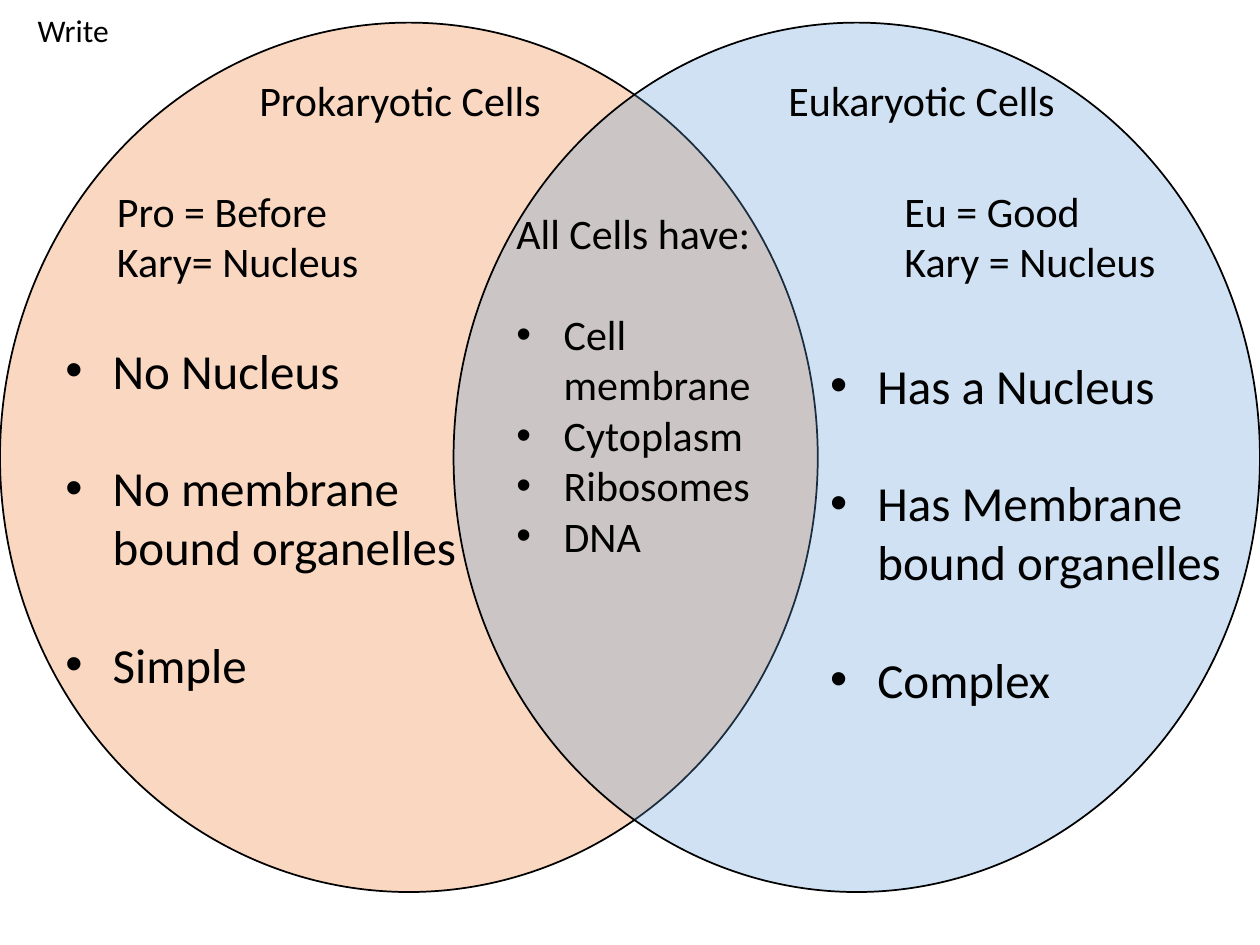
from lxml import etree
from pptx import Presentation, util as u
from pptx.dml.color import RGBColor
from pptx.enum import shapes, text
from pptx.oxml import ns

BLACK = RGBColor(0x00, 0x00, 0x00)
ORANGE = RGBColor(0xED, 0x7D, 0x31)
BLUE = RGBColor(0x5B, 0x9B, 0xD5)

deck = Presentation()
deck.slide_width, deck.slide_height = u.Inches(10), u.Inches(7.5)
slide = deck.slides.add_slide(deck.slide_layouts[6])
column, row = deck.slide_width / 100, deck.slide_height / 75


def on_grid(left, top, width, height):
    return (round(left * column), round(top * row),
            round(width * column), round(height * row))


def write(lines, place, size=24, bullets_from=None, gap=0, gap_after=()):
    """Lines from index bullets_from on get a bullet; those in gap_after get a gap in points."""
    frame = slide.shapes.add_textbox(*on_grid(*place)).text_frame
    frame.word_wrap = True
    frame.auto_size = text.MSO_AUTO_SIZE.SHAPE_TO_FIT_TEXT
    for index, line in enumerate(lines):
        paragraph = frame.paragraphs[0] if index == 0 else frame.add_paragraph()
        run = paragraph.add_run()
        run.text = line
        run.font.name, run.font.size = "Calibri", u.Pt(size)
        run.font.color.rgb = BLACK
        if index in gap_after:
            paragraph.space_after = u.Pt(gap)
        if bullets_from is not None and index >= bullets_from:
            properties = paragraph._p.get_or_add_pPr()
            indent = u.Inches(0.375)
            properties.set("marL", str(indent))
            properties.set("indent", str(-indent))
            etree.SubElement(properties, ns.qn("a:buFont"), typeface="Arial")
            etree.SubElement(properties, ns.qn("a:buChar"), char="•")


# Overlapping circles
for left, width, color, opacity in ((0, 64.9, ORANGE, 30), (36, 64, BLUE, 29)):
    circle = slide.shapes.add_shape(shapes.MSO_SHAPE.OVAL, *on_grid(left, 1.8, width, 69))
    circle.shadow.inherit = False
    circle.fill.solid()
    circle.fill.fore_color.rgb = color
    tint = circle.fill._xPr.find(".//" + ns.qn("a:srgbClr"))
    etree.SubElement(tint, ns.qn("a:alpha"), val=str(opacity * 1000))
    circle.line.color.rgb = BLACK
    circle.line.width = u.Pt(1)

# Each side: heading, word roots, traits
sides = (
    ("Prokaryotic Cells", 19.6,
     ("Pro = Before", "Kary= Nucleus"), 8.3,
     ("No Nucleus", "No membrane bound organelles", "Simple"), (4.2, 26.5)),
    ("Eukaryotic Cells", 61.6,
     ("Eu = Good", "Kary = Nucleus"), 70.8,
     ("Has a Nucleus", "Has Membrane bound organelles", "Complex"), (64.9, 27.7)),
)
for heading, heading_left, roots, roots_left, traits, traits_corner in sides:
    write([heading], (heading_left, 5.4, 25.6, 5))
    write(roots, (roots_left, 14.2, 25.6, 9.1))
    write(traits, (*traits_corner, 33.9, 29.3), size=28, bullets_from=0,
          gap=33.6, gap_after=(0, 1))

# Shared middle
write(["All Cells have:", "Cell membrane", "Cytoplasm", "Ribosomes", "DNA"],
      (40, 16, 21.8, 29.3), bullets_from=1, gap=28.8, gap_after=(0,))
write(["Write"], (2, 0.4, 10.8, 4), size=18)

deck.save("out.pptx")
